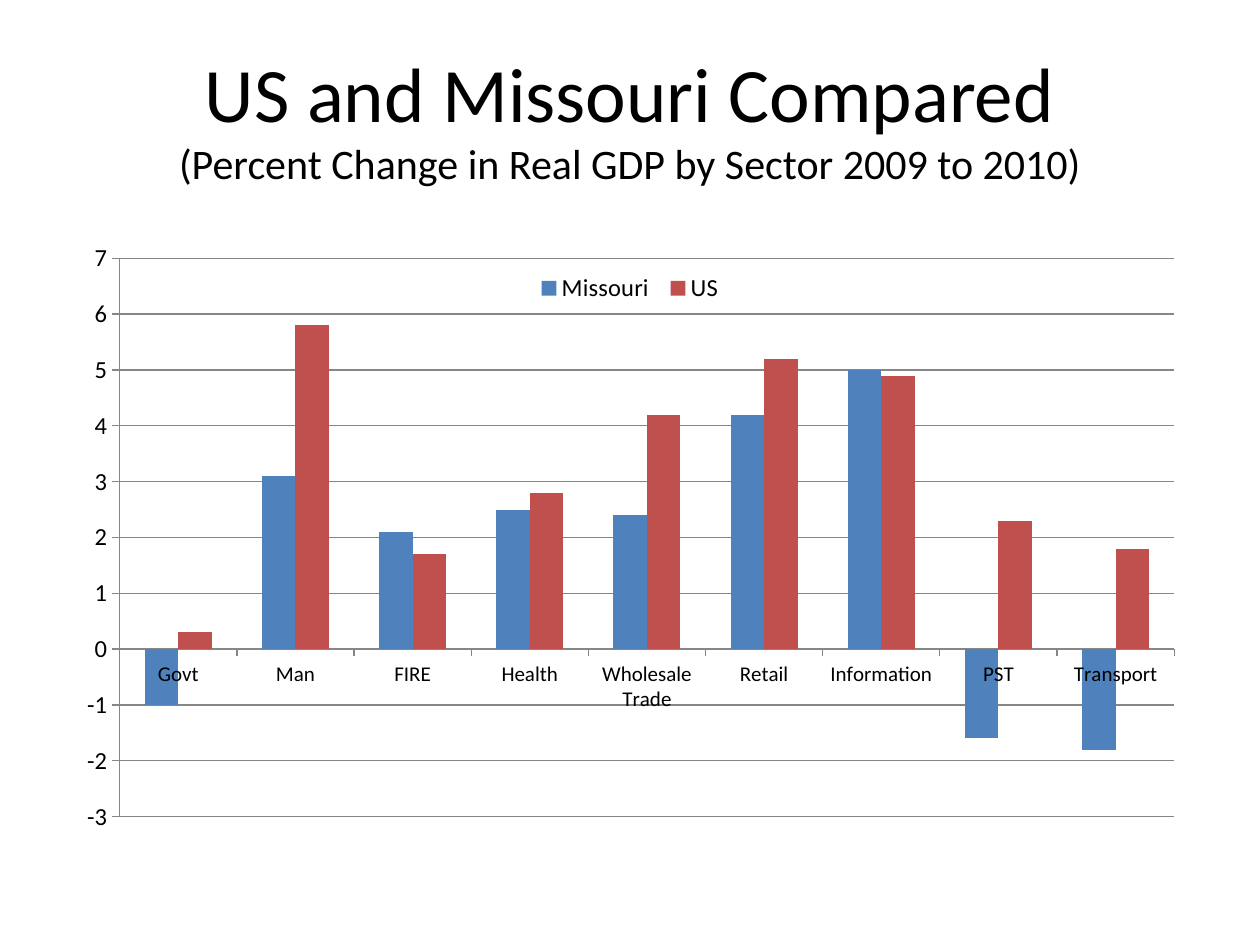
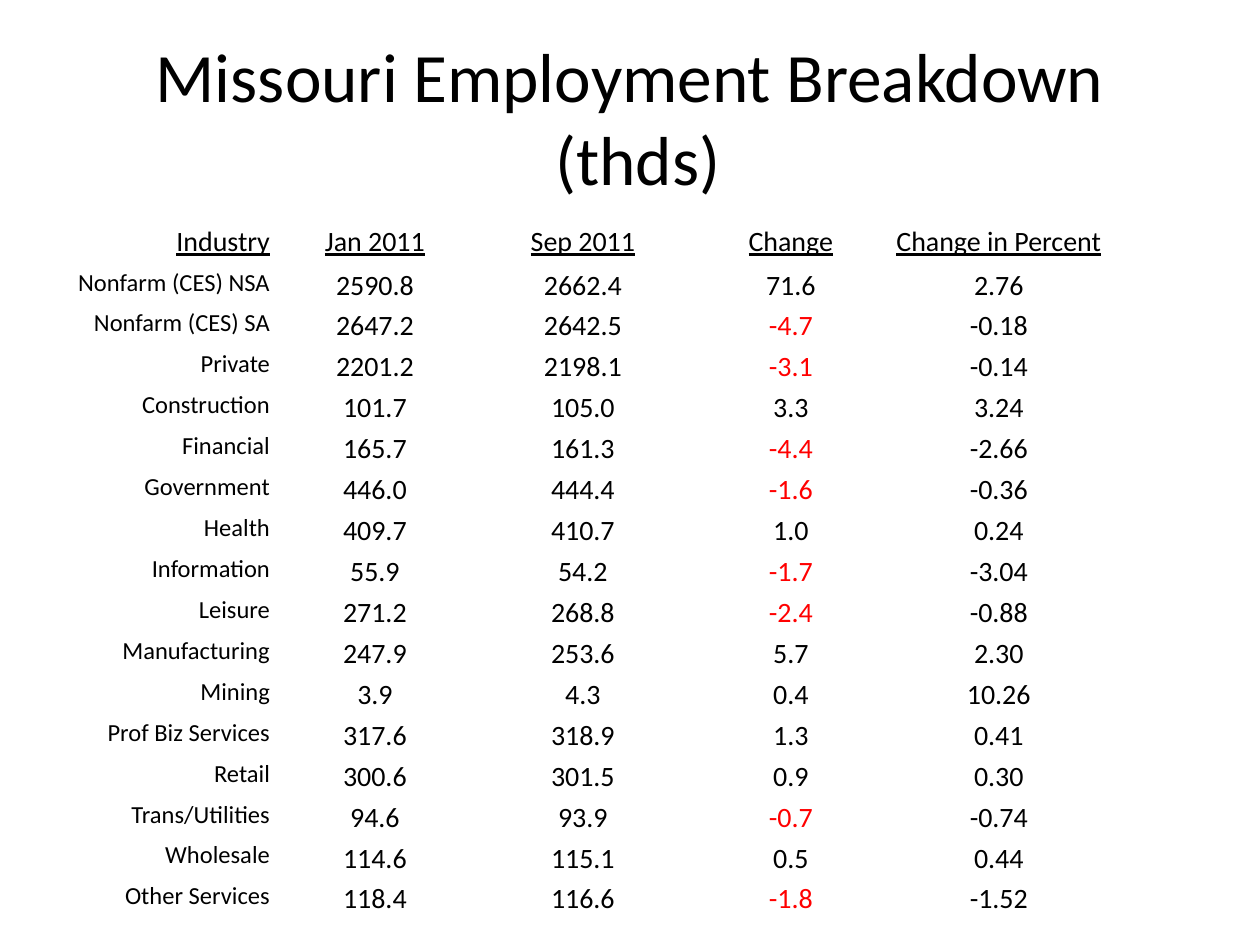
from pptx import Presentation
from pptx.chart.data import CategoryChartData
from pptx.dml.color import RGBColor
from pptx.enum.chart import XL_CHART_TYPE, XL_LEGEND_POSITION, XL_TICK_MARK
from pptx.enum.text import MSO_ANCHOR, PP_ALIGN
from pptx.oxml import parse_xml
from pptx.oxml.ns import nsdecls, qn
from pptx.util import Cm, Pt

FONT = "Calibri"
COLORS = {
    "text": "000000",
    "negative": "FF0000",
    "Missouri": "4F81BD",
    "US": "C0504D",
    "axis": "868686",
}

# Each title line is a text and its size in points.
GROWTH_TITLE = [
    ("US and Missouri Compared", 44),
    ("(Percent Change in Real GDP by Sector 2009 to 2010)", 24),
]
EMPLOYMENT_TITLE = [("Missouri Employment Breakdown", 39.6), (" (thds)", 39.6)]

SECTORS = ["Govt", "Man", "FIRE", "Health", "Wholesale Trade", "Retail",
           "Information", "PST", "Transport"]
GROWTH = {
    "Missouri": [-1, 3.1, 2.1, 2.5, 2.4, 4.2, 5, -1.6, -1.8],
    "US": [0.3, 5.8, 1.7, 2.8, 4.2, 5.2, 4.9, 2.3, 1.8],
}

EMPLOYMENT_HEADER = ["Industry", "Jan 2011", "Sep 2011", "Change", "Change in Percent"]
CHANGE_COLUMN = EMPLOYMENT_HEADER.index("Change")
EMPLOYMENT = [
    ("Nonfarm (CES) NSA", 2590.8, 2662.4),
    ("Nonfarm (CES) SA", 2647.2, 2642.5),
    ("Private", 2201.2, 2198.1),
    ("Construction", 101.7, 105.0),
    ("Financial", 165.7, 161.3),
    ("Government", 446.0, 444.4),
    ("Health", 409.7, 410.7),
    ("Information", 55.9, 54.2),
    ("Leisure", 271.2, 268.8),
    ("Manufacturing", 247.9, 253.6),
    ("Mining", 3.9, 4.3),
    ("Prof Biz Services", 317.6, 318.9),
    ("Retail", 300.6, 301.5),
    ("Trans/Utilities", 94.6, 93.9),
    ("Wholesale", 114.6, 115.1),
    ("Other Services", 118.4, 116.6),
]

LEFT = Cm(1.27)
CONTENT_WIDTH = Cm(22.86)


def style_font(font, size, color="text"):
    font.name = FONT
    font.size = Pt(size)
    font.bold = False
    font.color.rgb = RGBColor.from_string(COLORS[color])


def add_titled_slide(presentation, title_lines):
    slide = presentation.slides.add_slide(presentation.slide_layouts[6])
    frame = slide.shapes.add_textbox(LEFT, Cm(0.76), CONTENT_WIDTH, Cm(3.18)).text_frame
    frame.word_wrap = True
    frame.vertical_anchor = MSO_ANCHOR.MIDDLE
    paragraph = frame.paragraphs[0]
    paragraph.text = "\v".join(text for text, size in title_lines)
    paragraph.alignment = PP_ALIGN.CENTER
    for run, (text, size) in zip(paragraph.runs, title_lines):
        style_font(run.font, size)
    return slide


def manual_layout(x, y, width, height, inner=False):
    """Return a chart layout whose numbers are fractions of the chart area."""
    target = '<c:layoutTarget val="inner"/>' if inner else ""
    return parse_xml(
        f'<c:layout {nsdecls("c")}><c:manualLayout>{target}'
        '<c:xMode val="edge"/><c:yMode val="edge"/>'
        f'<c:x val="{x}"/><c:y val="{y}"/><c:w val="{width}"/><c:h val="{height}"/>'
        '</c:manualLayout></c:layout>')


def style_axis(axis, label_size):
    axis.major_tick_mark = XL_TICK_MARK.OUTSIDE
    axis.minor_tick_mark = XL_TICK_MARK.NONE
    style_font(axis.tick_labels.font, label_size)
    color_line(axis.format.line)


def color_line(line):
    line.width = Pt(0.75)
    line.color.rgb = RGBColor.from_string(COLORS["axis"])


def add_growth_chart(slide):
    data = CategoryChartData()
    data.categories = SECTORS
    for region, changes in GROWTH.items():
        data.add_series(region, changes)
    chart = slide.shapes.add_chart(XL_CHART_TYPE.COLUMN_CLUSTERED, LEFT, Cm(3.6),
                                   CONTENT_WIDTH, Cm(13.4), data).chart
    style_font(chart.font, 10)
    chart.has_title = False

    plot = chart.plots[0]
    plot.gap_width = 150
    plot.overlap = 0
    plot.vary_by_categories = False
    for series in plot.series:
        series.invert_if_negative = False
        series.format.fill.solid()
        series.format.fill.fore_color.rgb = RGBColor.from_string(COLORS[series.name])

    style_axis(chart.category_axis, 12)
    value_axis = chart.value_axis
    style_axis(value_axis, 14)
    value_axis.minimum_scale, value_axis.maximum_scale = -3, 7
    value_axis.major_unit = 1
    value_axis.has_major_gridlines = True
    color_line(value_axis.major_gridlines.format.line)

    chart.has_legend = True
    legend = chart.legend
    legend.position = XL_LEGEND_POSITION.TOP
    legend.include_in_layout = True
    style_font(legend.font, 14)

    plot_area = plot._element.getparent()
    legend_element = plot_area.getparent().find(qn("c:legend"))
    for element in (plot_area, legend_element):
        for layout in element.findall(qn("c:layout")):
            element.remove(layout)
    plot_area.insert(0, manual_layout(0.05, 0.12, 0.93, 0.84, inner=True))
    legend_element.find(qn("c:legendPos")).addnext(manual_layout(0.41, 0.13, 0.18, 0.07))


def employment_row(industry, january, september):
    change = september - january
    return [industry, f"{january:.1f}", f"{september:.1f}", f"{change:.1f}",
            f"{change / january * 100:.2f}"]


def fill_cell(cell, text, is_header, column):
    is_label = column == 0
    cell.fill.background()
    cell.margin_left = cell.margin_right = cell.margin_top = Cm(0.02)
    cell.margin_bottom = 0
    cell.vertical_anchor = MSO_ANCHOR.MIDDLE if is_header or is_label else MSO_ANCHOR.BOTTOM
    paragraph = cell.text_frame.paragraphs[0]
    paragraph.text = text
    paragraph.alignment = PP_ALIGN.RIGHT if is_label else PP_ALIGN.CENTER
    font = paragraph.runs[0].font
    is_loss = column == CHANGE_COLUMN and text.startswith("-")
    style_font(font, 14 if is_label and not is_header else 16,
               "negative" if is_loss else "text")
    font.underline = is_header


def add_employment_table(slide):
    rows = [EMPLOYMENT_HEADER] + [employment_row(*record) for record in EMPLOYMENT]
    table = slide.shapes.add_table(len(rows), len(EMPLOYMENT_HEADER), LEFT, Cm(4.45),
                                   Cm(20.96), Cm(14.04)).table
    for row_index, row in enumerate(rows):
        for column, text in enumerate(row):
            fill_cell(table.cell(row_index, column), text, row_index == 0, column)


def main():
    presentation = Presentation()
    presentation.slide_width = Cm(25.4)
    presentation.slide_height = Cm(19.05)
    add_growth_chart(add_titled_slide(presentation, GROWTH_TITLE))
    add_employment_table(add_titled_slide(presentation, EMPLOYMENT_TITLE))
    presentation.save("out.pptx")


if __name__ == "__main__":
    main()
